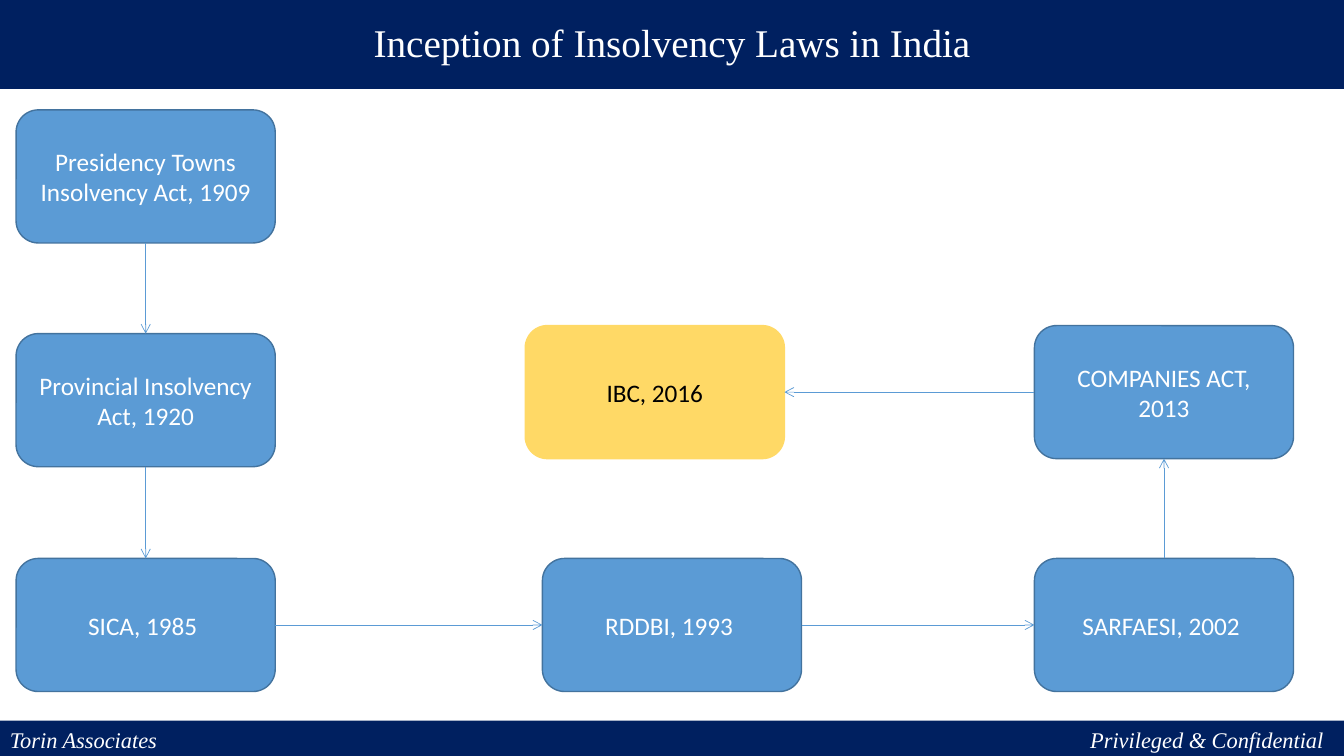
"""Build a slide that charts the inception of insolvency laws in India."""
from lxml import etree
from pptx import Presentation
from pptx import util as u
from pptx.dml.color import RGBColor
from pptx.enum import shapes, text
from pptx.oxml.ns import qn

NAVY = RGBColor(0x00, 0x20, 0x60)
BLUE = RGBColor(0x5B, 0x9B, 0xD5)
DARK_BLUE = RGBColor(0x43, 0x73, 0x9E)
GOLD = RGBColor(0xFF, 0xD9, 0x66)
WHITE = RGBColor(0xFF, 0xFF, 0xFF)
BLACK = RGBColor(0x00, 0x00, 0x00)

TITLE = "Inception of Insolvency Laws in India"
FOOTER = "Torin Associates\tPrivileged & Confidential"
PAST, CURRENT = (BLUE, DARK_BLUE, WHITE), (GOLD, GOLD, BLACK)
LAWS = [
    ("Presidency Towns Insolvency Act, 1909", "left", "top", PAST),
    ("Provincial Insolvency Act, 1920", "left", "middle", PAST),
    ("SICA, 1985 ", "left", "bottom", PAST),
    ("RDDBI, 1993 ", "centre", "bottom", PAST),
    ("SARFAESI, 2002 ", "right", "bottom", PAST),
    ("COMPANIES ACT, 2013", "right", "upper", PAST),
    ("IBC, 2016", "inner", "upper", CURRENT),
]
COLUMNS = {"left": 0.16, "inner": 5.21, "centre": 5.38, "right": 10.26}
ROWS = {"top": 1.09, "middle": 3.31, "upper": 3.23, "bottom": 5.54}
BOX_WIDTH, BOX_HEIGHT = 2.57, 1.32
SLIDE_WIDTH, SLIDE_HEIGHT = 13.33, 7.5
FOOTER_HEIGHT, FOOTER_TAB = 0.35, 13.03
TOP, LEFT, BOTTOM, RIGHT = range(4)


def add_box(slide, kind, area, words, fill, line, color, font, size):
    shape = slide.shapes.add_shape(kind, *(u.Inches(length) for length in area))
    shape.shadow.inherit = False
    shape.fill.solid()
    shape.fill.fore_color.rgb = fill
    if line is None:
        shape.line.fill.background()
    else:
        shape.line.color.rgb = line
        shape.line.width = u.Pt(1)
    frame = shape.text_frame
    frame.word_wrap = True
    frame.vertical_anchor = text.MSO_ANCHOR.MIDDLE
    frame.text = words
    paragraph = frame.paragraphs[0]
    paragraph.alignment = text.PP_ALIGN.CENTER
    for run in paragraph.runs:
        run.font.name = font
        run.font.size = u.Pt(size)
        run.font.color.rgb = color
    return shape


def add_title(slide):
    shape = add_box(slide, shapes.MSO_SHAPE.RECTANGLE, (-0.01, -0.01, SLIDE_WIDTH + 0.02, 0.9),
                    TITLE, NAVY, WHITE, WHITE, "Times New Roman", 28)
    shape.text_frame.paragraphs[0].line_spacing = 0.9


def add_footer(slide):
    area = (0, SLIDE_HEIGHT - FOOTER_HEIGHT, SLIDE_WIDTH, FOOTER_HEIGHT)
    shape = add_box(slide, shapes.MSO_SHAPE.RECTANGLE, area,
                    FOOTER, NAVY, None, WHITE, "Times New Roman", 16)
    shape.text_frame.vertical_anchor = text.MSO_ANCHOR.TOP
    paragraph = shape.text_frame.paragraphs[0]
    paragraph.alignment = text.PP_ALIGN.LEFT
    for run in paragraph.runs:
        run.font.italic = True
    tabs = etree.SubElement(paragraph._p.get_or_add_pPr(), qn("a:tabLst"))
    etree.SubElement(tabs, qn("a:tab"), pos=str(u.Inches(FOOTER_TAB)), algn="r")


def add_arrow(slide, source, target):
    if abs(source.left - target.left) < source.width:
        sides = (BOTTOM, TOP) if source.top < target.top else (TOP, BOTTOM)
    else:
        sides = (RIGHT, LEFT) if source.left < target.left else (LEFT, RIGHT)
    arrow = slide.shapes.add_connector(shapes.MSO_CONNECTOR.STRAIGHT, 0, 0, 0, 0)
    arrow.begin_connect(source, sides[0])
    arrow.end_connect(target, sides[1])
    arrow.line.color.rgb = BLUE
    arrow.line.width = u.Pt(0.5)
    etree.SubElement(arrow.line._get_or_add_ln(), qn("a:tailEnd"), type="arrow")
    etree.SubElement(arrow._element.spPr, qn("a:effectLst"))


def main():
    presentation = Presentation()
    presentation.slide_width = u.Inches(SLIDE_WIDTH)
    presentation.slide_height = u.Inches(SLIDE_HEIGHT)
    slide = presentation.slides.add_slide(presentation.slide_layouts[6])
    add_title(slide)
    add_footer(slide)
    boxes = [
        add_box(slide, shapes.MSO_SHAPE.FLOWCHART_ALTERNATE_PROCESS,
                (COLUMNS[column], ROWS[row], BOX_WIDTH, BOX_HEIGHT),
                law, *colors, "Calibri", 18)
        for law, column, row, colors in LAWS
    ]
    for source, target in zip(boxes, boxes[1:]):
        add_arrow(slide, source, target)
    presentation.save("out.pptx")


if __name__ == "__main__":
    main()
